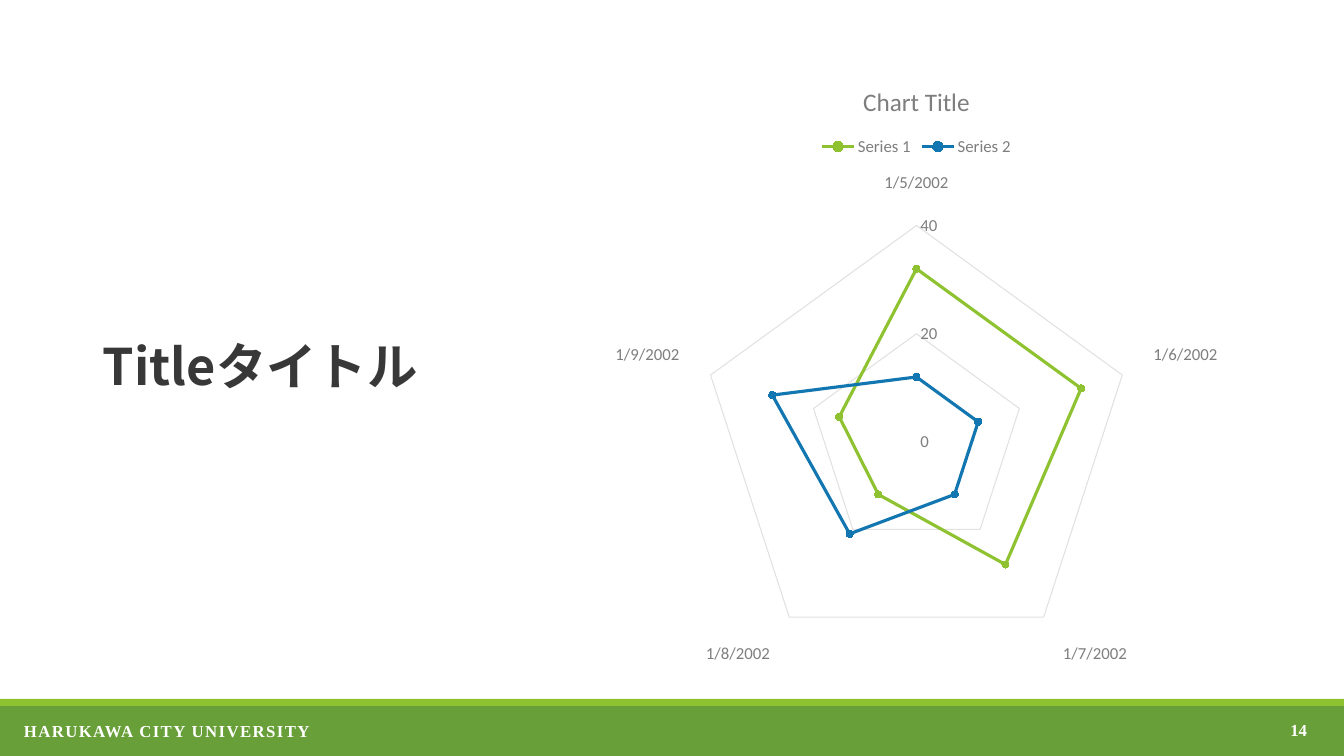
from pptx import Presentation
from pptx.chart.data import CategoryChartData
from pptx.dml.color import RGBColor
from pptx.enum.chart import XL_CHART_TYPE as ChartType, XL_LEGEND_POSITION as LegendPosition
from pptx.enum.chart import XL_MARKER_STYLE as MarkerStyle, XL_TICK_MARK as TickMark
from pptx.enum.shapes import MSO_SHAPE as Shape
from pptx.enum.text import MSO_ANCHOR as Anchor, PP_ALIGN as Align
from pptx.oxml.ns import qn
from pptx.util import Emu, Pt

WHITE = RGBColor(0xFF, 0xFF, 0xFF)
DARK_GREEN = RGBColor(0x68, 0x9F, 0x38)
GREEN = RGBColor(0x8F, 0xC2, 0x31)
BLUE = RGBColor(0x12, 0x76, 0xB1)
INK = RGBColor(0x38, 0x38, 0x38)
GREY = RGBColor(0x7E, 0x7E, 0x7E)
GRID = RGBColor(0xE1, 0xE1, 0xE1)

PAGE_WIDTH, PAGE_HEIGHT = 1344, 756
FOOTER_HEIGHT, STRIP_HEIGHT = 50, 7

DATES = [f"1/{day}/2002" for day in range(5, 10)]
SERIES = [
    ("Series 1", (32, 32, 28, 12, 15), GREEN),
    ("Series 2", (12, 12, 12, 21, 28), BLUE),
]


def px(length):
    return Emu(round(length * 914400 / 100.8))


def px_box(box):
    return [px(length) for length in box]


def set_font(font, name, size, color, bold=False):
    values = {"name": name, "size": Pt(size), "bold": bold}
    for key, value in values.items():
        setattr(font, key, value)
    font.color.rgb = color


def set_line(line, color, width):
    line.color.rgb = color
    line.width = Pt(width)


def add_bar(page, box, color):
    bar = page.shapes.add_shape(Shape.RECTANGLE, *px_box(box))
    bar.shadow.inherit = False
    bar.fill.solid()
    bar.fill.fore_color.rgb = color
    bar.line.fill.background()


def add_text(page, box, text, font, anchor=Anchor.MIDDLE, align=Align.LEFT, spacing=1.0):
    """Add one line of text and return its run."""
    frame = page.shapes.add_textbox(*px_box(box)).text_frame
    frame.word_wrap = True
    frame.vertical_anchor = anchor
    para = frame.paragraphs[0]
    para.alignment = align
    para.line_spacing = spacing
    span = para.add_run()
    span.text = text
    set_font(span.font, *font)
    return span


def add_title(page, box):
    span = add_text(page, box, "Titleタイトル", ("Noto Sans CJK JP", 36, INK, True), spacing=0.9)
    east_asian = span.font._element.makeelement(qn("a:ea"), {"typeface": "Noto Sans CJK JP"})
    span.font._element.find(qn("a:latin")).addnext(east_asian)


def add_radar(page, box):
    data = CategoryChartData()
    data.categories = DATES
    for name, values, _ in SERIES:
        data.add_series(name, values)
    chart = page.shapes.add_chart(ChartType.RADAR_MARKERS, *px_box(box), data).chart
    set_font(chart.font, "Calibri", 10, INK)

    chart.has_title = True
    heading = chart.chart_title.text_frame.paragraphs[0].add_run()
    heading.text = "Chart Title"
    set_font(heading.font, "Calibri", 18, GREY)
    chart.chart_title.include_in_layout = False

    chart.has_legend = True
    chart.legend.position = LegendPosition.TOP
    chart.legend.include_in_layout = False
    set_font(chart.legend.font, "Calibri", 12, GREY)

    for axis in (chart.category_axis, chart.value_axis):
        axis.major_tick_mark = axis.minor_tick_mark = TickMark.NONE
        set_font(axis.tick_labels.font, "Calibri", 12, GREY)
        set_line(axis.major_gridlines.format.line, GRID, 0.75)
    set_line(chart.category_axis.format.line, GRID, 0.75)
    scale = {"minimum_scale": 0, "maximum_scale": 40, "major_unit": 20}
    for key, value in scale.items():
        setattr(chart.value_axis, key, value)
    chart.value_axis.format.line.fill.background()

    plot = chart.plots[0]
    plot.vary_by_categories = False
    for series, (_, _, color) in zip(plot.series, SERIES):
        set_line(series.format.line, color, 2.25)
        marker = series.marker
        marker.style, marker.size = MarkerStyle.CIRCLE, 5
        marker.format.fill.solid()
        marker.format.fill.fore_color.rgb = color
        set_line(marker.format.line, color, 0.75)


def add_footer(page, box):
    left, top, width, height = box
    add_bar(page, box, DARK_GREEN)
    add_bar(page, (left, top - STRIP_HEIGHT, width, STRIP_HEIGHT), GREEN)
    font = ("Times New Roman", 12, WHITE, True)
    name = add_text(page, (left + 14, top + 10, 1258, 30), "HARUKAWA CITY UNIVERSITY", font, Anchor.TOP)
    name.font._element.set("spc", "100")
    add_text(page, (left + width - 329, top + 4, 302, 40), "14", font, align=Align.RIGHT)


def main():
    deck = Presentation()
    deck.slide_width, deck.slide_height = px(PAGE_WIDTH), px(PAGE_HEIGHT)
    page = deck.slides.add_slide(deck.slide_layouts[6])
    add_footer(page, (0, PAGE_HEIGHT - FOOTER_HEIGHT, PAGE_WIDTH, FOOTER_HEIGHT))
    add_radar(page, (565, 62, 703, 614))
    add_title(page, (93, 296, 413, 146))
    deck.save("out.pptx")


if __name__ == "__main__":
    main()
